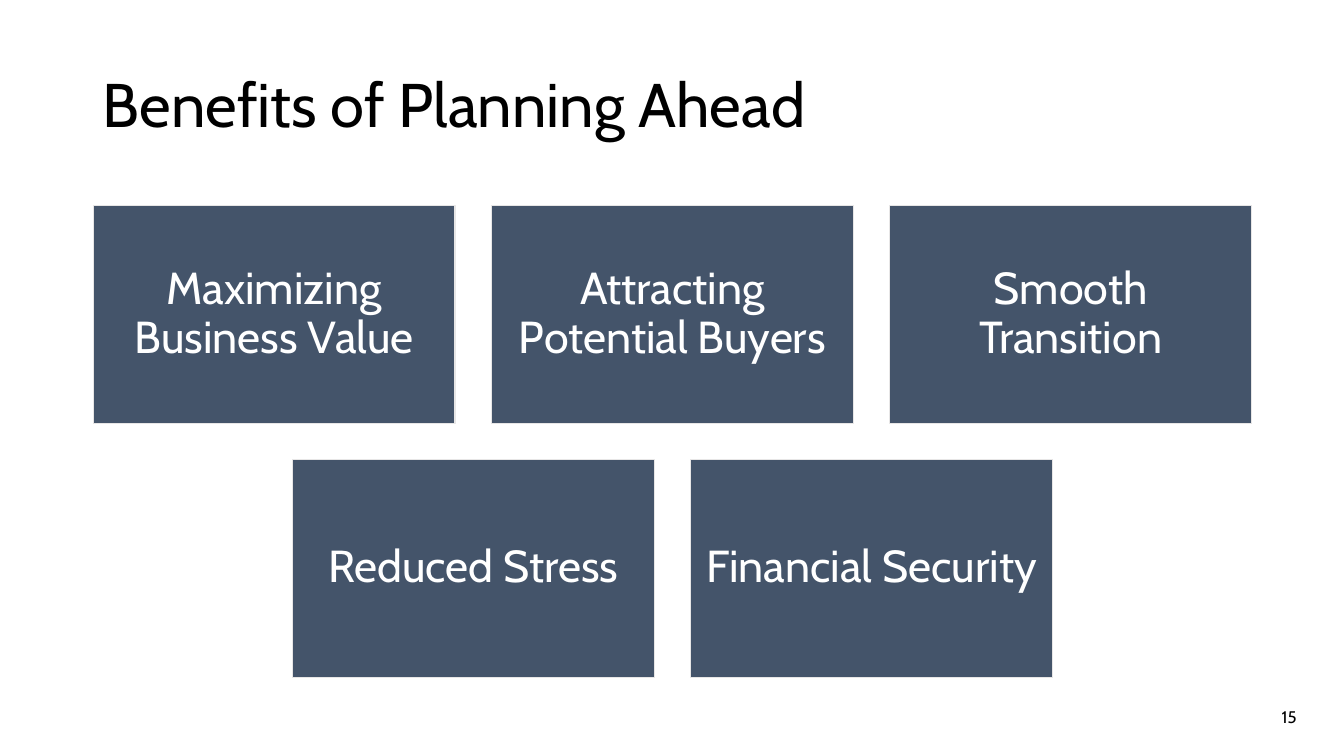
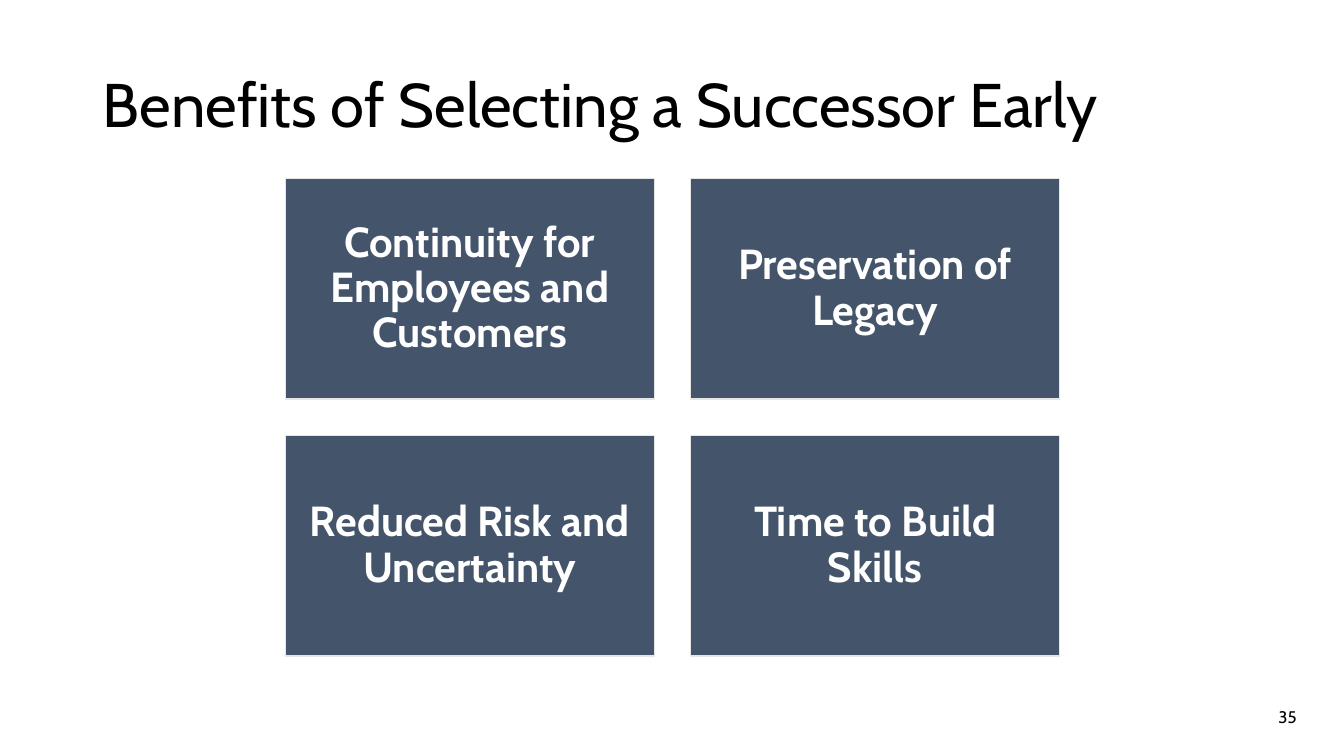
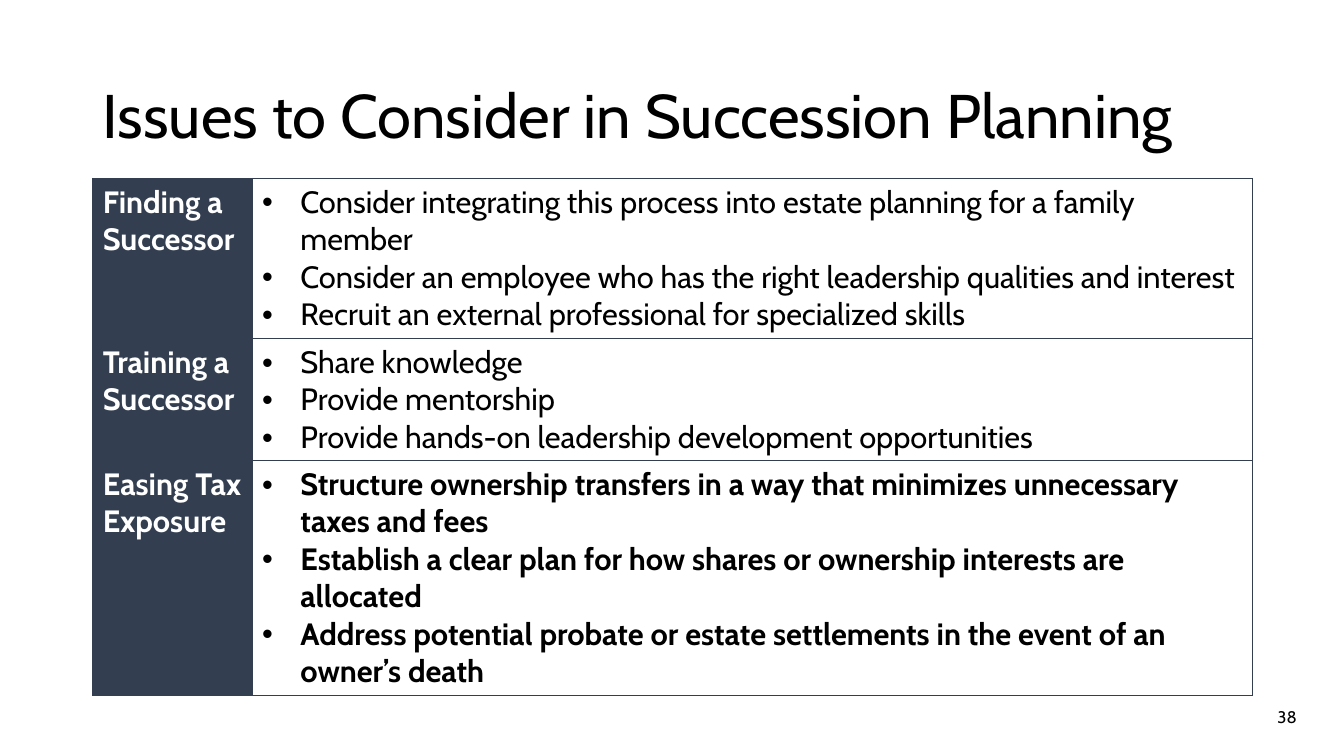
from lxml.etree import SubElement
from pptx import Presentation
from pptx.dml.color import RGBColor
from pptx.enum.shapes import MSO_SHAPE as SHAPE
from pptx.enum.text import MSO_ANCHOR as ANCHOR, MSO_AUTO_SIZE as AUTO, PP_ALIGN as ALIGN
from pptx.oxml import parse_xml
from pptx.oxml.ns import nsdecls, qn
from pptx.util import Inches, Pt

COLORS = {"text": "000000", "white": "FFFFFF", "card": "44546A", "edge": "E7E6E6", "table": "333F50"}
FONT = "Cabin"
LEFT, WIDTH, GAP = 0.92, 11.5, 0.36

CARD_SLIDES = [
    {"title": "Benefits of Planning Ahead", "number": "15",
     "top": 2.04, "size": (3.59, 2.16), "inset": 0.13, "font": {"size": Pt(32), "bold": False},
     "rows": [["Maximizing Business Value", "Attracting Potential Buyers", "Smooth Transition"],
              ["Reduced Stress", "Financial Security"]]},
    {"title": "Benefits of Selecting a Successor Early", "number": "35",
     "top": 1.77, "size": (3.66, 2.19), "inset": 0.12, "font": {"size": Pt(30), "bold": True},
     "rows": [["Continuity for Employees and Customers", "Preservation of Legacy"],
              ["Reduced Risk and Uncertainty", "Time to Build Skills"]]},
]

ISSUES_TITLE, ISSUES_NUMBER = "Issues to Consider in Succession Planning", "38"
COLUMN_WIDTHS = [1.58, 9.92]
# heading, row height, bold bullets, bullets
ISSUES = [
    ("Finding a Successor", 1.59, False, [
        "Consider integrating this process into estate planning for a family member",
        "Consider an employee who has the right leadership qualities and interest",
        "Recruit an external professional for specialized skills"]),
    ("Training a Successor", 1.21, False, [
        "Share knowledge",
        "Provide mentorship",
        "Provide hands-on leadership development opportunities"]),
    ("Easing Tax Exposure", 2.33, True, [
        "Structure ownership transfers in a way that minimizes unnecessary taxes and fees",
        "Establish a clear plan for how shares or ownership interests are allocated",
        "Address potential probate or estate settlements in the event of an owner’s death"]),
]


def rgb(name):
    return RGBColor.from_string(COLORS[name])


def set_attrs(obj, **values):
    for name, value in values.items():
        setattr(obj, name, value)


def write(p, text, color, **font):
    r = p.add_run()
    r.text = text
    set_attrs(r.font, name=FONT, **font)
    r.font.color.rgb = rgb(color)


def add_slide(prs, title, number, title_height=1.45):
    """Add a slide with its title and page number."""
    s = prs.slides.add_slide(prs.slide_layouts[5])
    set_attrs(s.shapes.title, left=Inches(LEFT), top=Inches(0),
              width=Inches(WIDTH), height=Inches(title_height))
    tf = s.shapes.title.text_frame
    set_attrs(tf, vertical_anchor=ANCHOR.BOTTOM, auto_size=AUTO.NONE, word_wrap=True)
    set_attrs(tf.paragraphs[0], alignment=ALIGN.LEFT, line_spacing=0.9)
    write(tf.paragraphs[0], title, "text", size=Pt(44))

    tf = s.shapes.add_textbox(Inches(9.96), Inches(6.91), Inches(3), Inches(0.4)).text_frame
    set_attrs(tf, vertical_anchor=ANCHOR.MIDDLE, word_wrap=True)
    tf.paragraphs[0].alignment = ALIGN.RIGHT
    write(tf.paragraphs[0], number, "text", size=Pt(12))
    return s


def add_card(s, text, x, y, size, inset, font):
    sp = s.shapes.add_shape(SHAPE.RECTANGLE, *(Inches(v) for v in (x, y, *size)))
    sp.shadow.inherit = False
    sp.fill.solid()
    sp.fill.fore_color.rgb = rgb("card")
    sp.line.color.rgb = rgb("edge")
    sp.line.width = Pt(1)
    tf = sp.text_frame
    set_attrs(tf, vertical_anchor=ANCHOR.MIDDLE, word_wrap=True)
    for side in ("left", "top", "right", "bottom"):
        setattr(tf, f"margin_{side}", Inches(inset))
    set_attrs(tf.paragraphs[0], alignment=ALIGN.CENTER, line_spacing=0.9)
    write(tf.paragraphs[0], text, "white", **font)


def add_card_rows(s, rows, top, size, inset, font):
    """Place each row of cards centred under the title."""
    width, height = size
    for i, row in enumerate(rows):
        row_width = len(row) * (width + GAP) - GAP
        x0 = LEFT + (WIDTH - row_width) / 2
        for j, text in enumerate(row):
            add_card(s, text, x0 + j * (width + GAP), top + i * (height + GAP), size, inset, font)


def style_cell(cell, color):
    cell.fill.solid()
    cell.fill.fore_color.rgb = rgb(color)
    tcPr = cell._tc.get_or_add_tcPr()
    for i, side in enumerate("LRTB"):
        tcPr.insert(i, parse_xml(
            f'<a:ln{side} {nsdecls("a")} w="12700"><a:solidFill>'
            f'<a:srgbClr val="{COLORS["table"]}"/></a:solidFill></a:ln{side}>'))


def add_bullet(p):
    pPr = p._p.get_or_add_pPr()
    pPr.set("marL", str(Inches(0.38)))
    pPr.set("indent", str(-Inches(0.38)))
    SubElement(pPr, qn("a:buFont")).set("typeface", "Arial")
    SubElement(pPr, qn("a:buChar")).set("char", "•")


def add_issues_table(s):
    height = sum(issue[1] for issue in ISSUES)
    table = s.shapes.add_table(len(ISSUES), len(COLUMN_WIDTHS), Inches(LEFT), Inches(1.77),
                               Inches(WIDTH), Inches(height)).table
    set_attrs(table, first_row=False, horz_banding=False)
    for column, width in zip(table.columns, COLUMN_WIDTHS):
        column.width = Inches(width)
    for row, (heading, row_height, bold, bullets) in zip(table.rows, ISSUES):
        row.height = Inches(row_height)
        head, body = row.cells
        style_cell(head, "table")
        style_cell(body, "white")
        write(head.text_frame.paragraphs[0], heading, "white", size=Pt(22), bold=True)
        tf = body.text_frame
        for i, text in enumerate(bullets):
            p = tf.add_paragraph() if i else tf.paragraphs[0]
            add_bullet(p)
            write(p, text, "text", size=Pt(22), bold=bold)


def main():
    prs = Presentation()
    set_attrs(prs, slide_width=Inches(13.33), slide_height=Inches(7.5))
    for c in CARD_SLIDES:
        s = add_slide(prs, c["title"], c["number"])
        add_card_rows(s, c["rows"], c["top"], c["size"], c["inset"], c["font"])
    add_issues_table(add_slide(prs, ISSUES_TITLE, ISSUES_NUMBER, title_height=1.56))
    prs.save("out.pptx")


if __name__ == "__main__":
    main()
